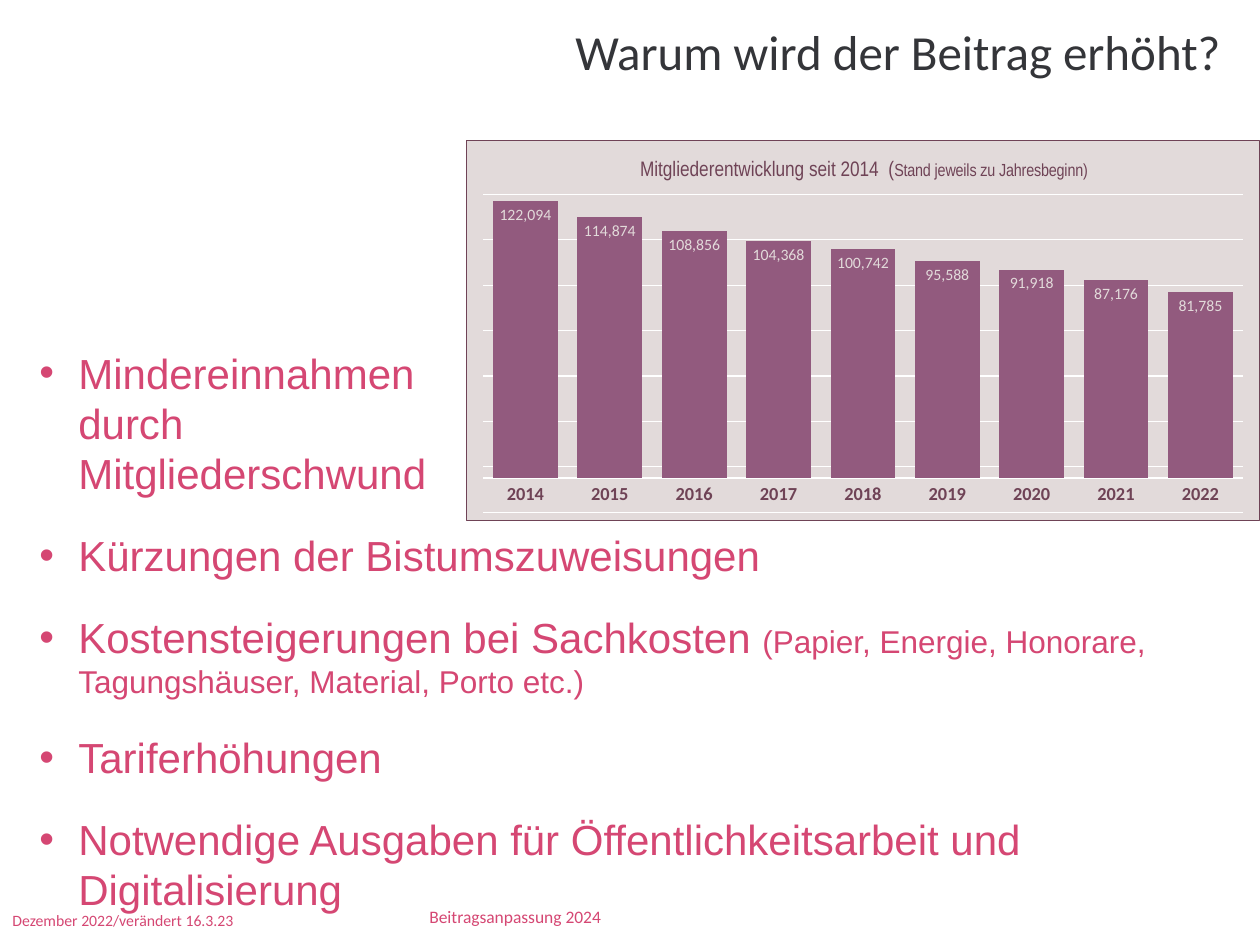
from dataclasses import dataclass

from lxml import etree
from pptx import Presentation
from pptx.chart.data import CategoryChartData
from pptx.dml.color import RGBColor
from pptx.enum.chart import XL_CHART_TYPE, XL_LABEL_POSITION, XL_TICK_MARK
from pptx.enum.text import MSO_ANCHOR, MSO_AUTO_SIZE, PP_ALIGN
from pptx.oxml import parse_xml
from pptx.oxml.ns import nsdecls, qn
from pptx.util import Emu, Pt

COLUMNS = XL_CHART_TYPE.COLUMN_CLUSTERED
INSIDE_END = XL_LABEL_POSITION.INSIDE_END
NO_TICK = XL_TICK_MARK.NONE
TOP = MSO_ANCHOR.TOP
NO_AUTOFIT = MSO_AUTO_SIZE.NONE
RIGHT = PP_ALIGN.RIGHT

EMU_PER_PX = 914400 / 126
TITLE_ONLY = 5


@dataclass(frozen=True)
class Theme:
    accent: str = "D54773"
    heading: str = "343539"
    plum: str = "6F4356"
    column: str = "925A7E"
    panel: str = "E2DADA"
    white: str = "FFFFFF"
    sans: str = "Calibri"
    body: str = "Arial"
    narrow: str = "Arial Narrow"
    heading_size: float = 28
    body_size: float = 24
    detail_size: float = 18
    chart_title_size: float = 12
    axis_size: float = 10.5
    small_size: float = 10
    tiny_size: float = 9


@dataclass(frozen=True)
class Frame:
    left: int
    top: int
    width: int
    height: int

    def emu(self):
        return [Emu(round(v * EMU_PER_PX)) for v in (self.left, self.top, self.width, self.height)]


@dataclass(frozen=True)
class Bullet:
    text: str
    detail: str = ""


THEME = Theme()
PAGE = Frame(0, 0, 1260, 945)
HEADING_FRAME = Frame(548, 15, 685, 72)
BODY_FRAME = Frame(27, 341, 1233, 543)
CHART_FRAME = Frame(466, 140, 794, 381)
PLOT_FRAME = Frame(483, 194, 761, 319)
CHART_TITLE_FRAME = Frame(636, 154, 447, 24)

FOOTERS = [
    ("Dezember 2022/verändert 16.3.23", Frame(0, 905, 284, 50), THEME.tiny_size),
    ("Beitragsanpassung 2024", Frame(417, 900, 426, 50), THEME.small_size),
]
BULLETS = [
    Bullet("Mindereinnahmen\vdurch\vMitgliederschwund"),
    Bullet("Kürzungen der Bistumszuweisungen"),
    Bullet("Kostensteigerungen bei Sachkosten ",
           "(Papier, Energie, Honorare, Tagungshäuser, Material, Porto etc.)"),
    Bullet("Tariferhöhungen"),
    Bullet("Notwendige Ausgaben für Öffentlichkeitsarbeit und Digitalisierung"),
]
FIRST_YEAR = 2014
MEMBERS = [122094, 114874, 108856, 104368, 100742, 95588, 91918, 87176, 81785]


def style_font(font, *, size: float, color: str, name: str, bold: bool = False) -> None:
    font.size, font.name, font.bold = Pt(size), name, bold
    font.color.rgb = RGBColor.from_string(color)


def add_text(para, text: str, **font_format) -> None:
    """Append text to a paragraph; a vertical tab in it starts a new line."""
    for index, line in enumerate(text.split("\v")):
        if index:
            para.add_line_break()
        span = para.add_run()
        span.text = line
        style_font(span.font, **font_format)


def add_box(page, frame: Frame):
    box = page.shapes.add_textbox(*frame.emu())
    box.text_frame.word_wrap = True
    return box


def set_heading(page) -> None:
    heading = page.shapes.title
    heading.left, heading.top, heading.width, heading.height = HEADING_FRAME.emu()
    text_frame = heading.text_frame
    text_frame.word_wrap = False
    text_frame.auto_size = NO_AUTOFIT
    text_frame.vertical_anchor = TOP
    para = text_frame.paragraphs[0]
    para.alignment = RIGHT
    add_text(para, "Warum wird der Beitrag erhöht?", size=THEME.heading_size,
             color=THEME.heading, name=THEME.sans)


def add_bullets(page, bullets: list[Bullet]) -> None:
    text_frame = add_box(page, BODY_FRAME).text_frame
    indent = round(39 * EMU_PER_PX)
    for index, bullet in enumerate(bullets):
        para = text_frame.add_paragraph() if index else text_frame.paragraphs[0]
        properties = para._p.get_or_add_pPr()
        properties.set("marL", str(indent))
        properties.set("indent", str(-indent))
        etree.SubElement(properties, qn("a:buFont")).set("typeface", THEME.body)
        etree.SubElement(properties, qn("a:buChar")).set("char", "•")
        para.space_after = Pt(18)
        add_text(para, bullet.text, size=THEME.body_size, color=THEME.accent, name=THEME.body)
        if bullet.detail:
            add_text(para, bullet.detail, size=THEME.detail_size, color=THEME.accent,
                     name=THEME.body)


def set_layout(parent, frame: Frame, *, plot: bool) -> None:
    """Place the plot area or the title by fractions of the chart frame."""
    for old in parent.findall(qn("c:layout")):
        parent.remove(old)
    values = {
        "xMode": "edge", "yMode": "edge",
        "x": round((frame.left - CHART_FRAME.left) / CHART_FRAME.width, 3),
        "y": round((frame.top - CHART_FRAME.top) / CHART_FRAME.height, 3),
    }
    if plot:
        values = {"layoutTarget": "inner", **values,
                  "w": round(frame.width / CHART_FRAME.width, 3),
                  "h": round(frame.height / CHART_FRAME.height, 3)}
    layout = parse_xml(f"<c:layout {nsdecls('c')}><c:manualLayout/></c:layout>")
    for tag, value in values.items():
        etree.SubElement(layout[0], qn(f"c:{tag}")).set("val", str(value))
    parent.insert(0 if plot else 1, layout)


def set_line(line, color: str) -> None:
    line.color.rgb = RGBColor.from_string(color)
    line.width = Pt(0.75)


def fill_panel(chart) -> None:
    """Give the whole chart its background and border."""
    chart._chartSpace.find(qn("c:chart")).addnext(parse_xml(
        f'<c:spPr {nsdecls("c", "a")}>'
        f'<a:solidFill><a:srgbClr val="{THEME.panel}"/></a:solidFill>'
        f'<a:ln w="9525"><a:solidFill><a:srgbClr val="{THEME.plum}"/></a:solidFill></a:ln>'
        "</c:spPr>"))


def add_member_chart(page) -> None:
    data = CategoryChartData(number_format="#,##0")
    data.categories = [str(FIRST_YEAR + index) for index in range(len(MEMBERS))]
    data.add_series("Mitglieder", MEMBERS)
    chart = page.shapes.add_chart(COLUMNS, *CHART_FRAME.emu(), data).chart
    chart.has_legend = False
    style_font(chart.font, size=THEME.small_size, color=THEME.white, name=THEME.sans)
    fill_panel(chart)

    para = chart.chart_title.text_frame.paragraphs[0]
    for text, size in (("Mitgliederentwicklung seit 2014  (", THEME.chart_title_size),
                       ("Stand jeweils zu Jahresbeginn)", THEME.small_size)):
        add_text(para, text, size=size, color=THEME.plum, name=THEME.narrow)
    set_layout(chart.chart_title._element, CHART_TITLE_FRAME, plot=False)
    set_layout(chart._chartSpace.chart.plotArea, PLOT_FRAME, plot=True)

    years = chart.category_axis
    years.major_tick_mark = NO_TICK
    style_font(years.tick_labels.font, size=THEME.axis_size, color=THEME.plum,
               name=THEME.sans, bold=True)
    set_line(years.format.line, THEME.white)
    counts = chart.value_axis
    counts.minimum_scale, counts.maximum_scale, counts.major_unit = -15000, 125000, 20000
    set_line(counts.major_gridlines.format.line, THEME.white)
    counts.visible = False

    plot = chart.plots[0]
    plot.gap_width, plot.overlap, plot.vary_by_categories = 30, -27, False
    fill = plot.series[0].format.fill
    fill.solid()
    fill.fore_color.rgb = RGBColor.from_string(THEME.column)
    plot.has_data_labels = True
    labels = plot.data_labels
    labels.show_value = True
    labels.position = INSIDE_END
    style_font(labels.font, size=THEME.tiny_size, color=THEME.panel, name=THEME.sans)


def main() -> None:
    deck = Presentation()
    deck.slide_width, deck.slide_height = PAGE.emu()[2:]
    page = deck.slides.add_slide(deck.slide_layouts[TITLE_ONLY])
    for text, frame, size in FOOTERS:
        para = add_box(page, frame).text_frame.paragraphs[0]
        add_text(para, text, size=size, color=THEME.accent, name=THEME.sans)
    set_heading(page)
    add_bullets(page, BULLETS)
    add_member_chart(page)
    deck.save("out.pptx")


if __name__ == "__main__":
    main()
